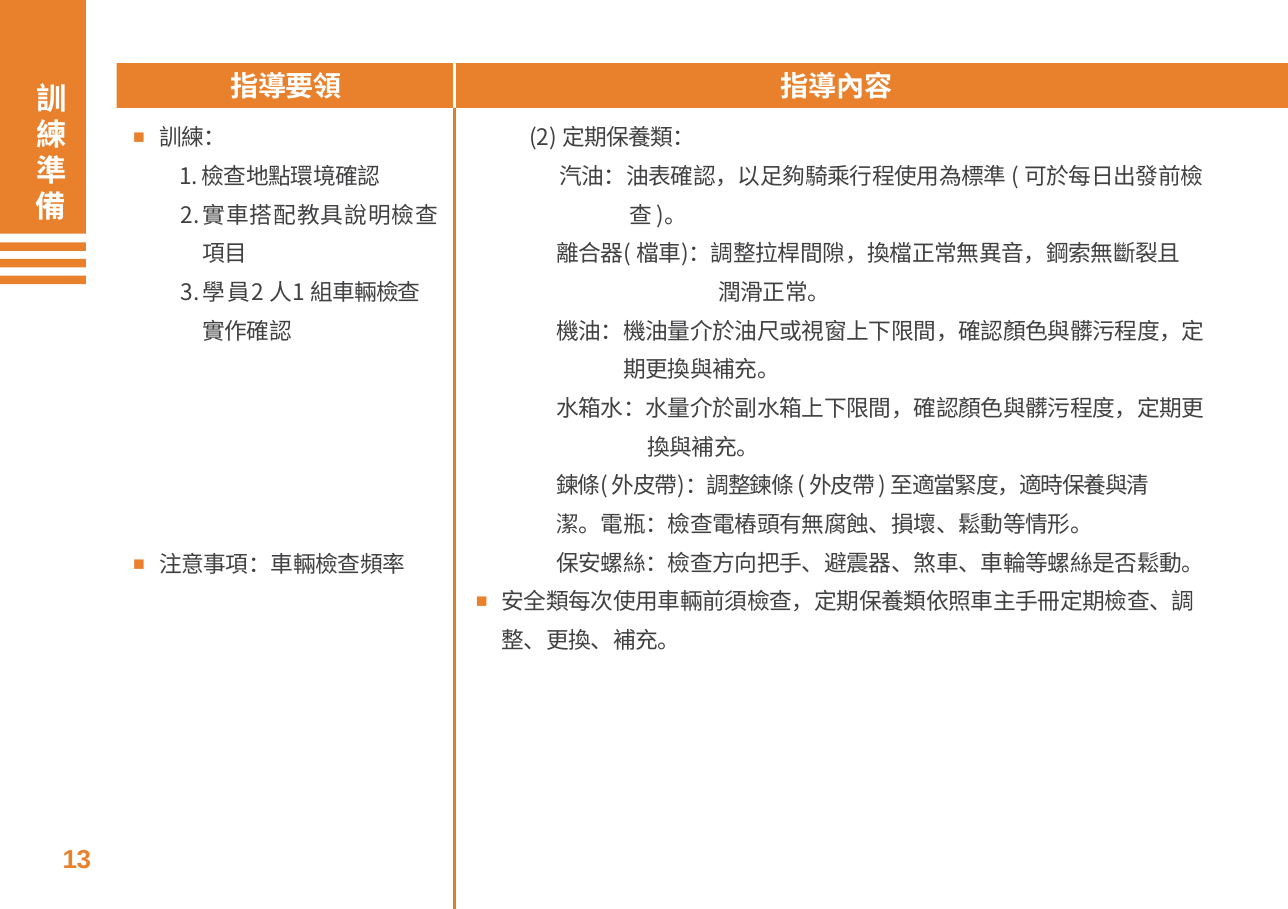
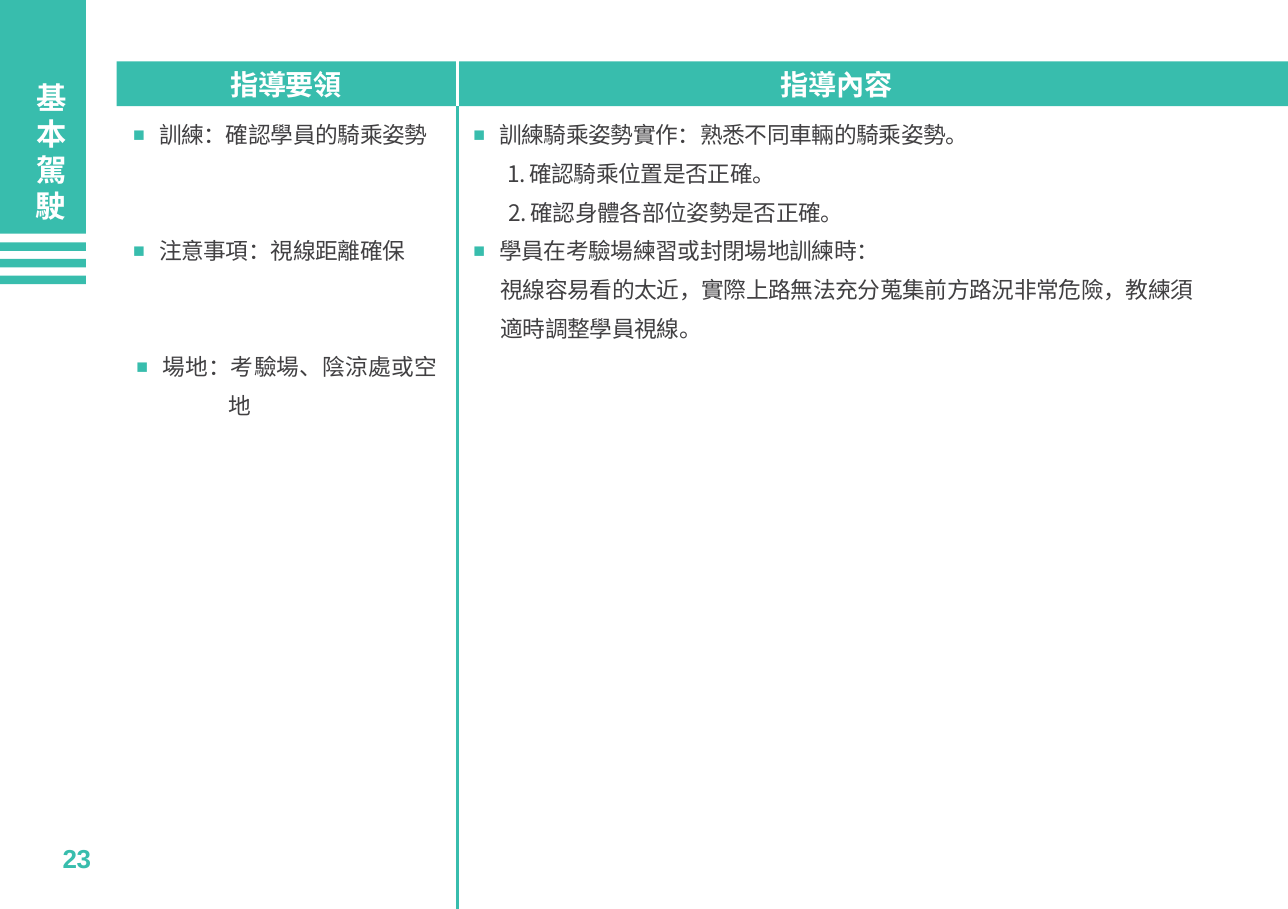
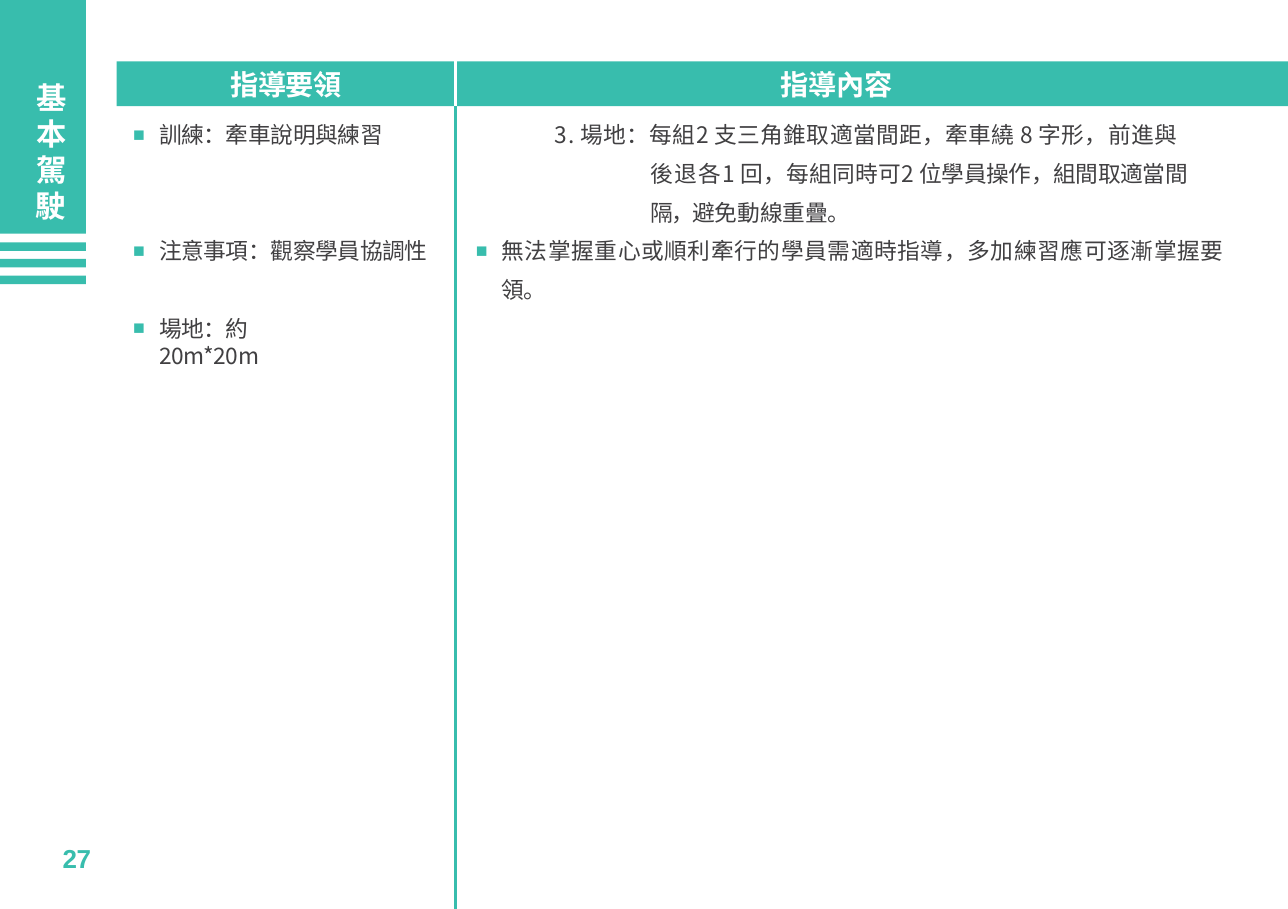
from dataclasses import dataclass
from enum import Enum

from lxml.etree import SubElement
from pptx import Presentation
from pptx.dml.color import RGBColor
from pptx.enum.shapes import MSO_CONNECTOR, MSO_SHAPE
from pptx.enum.text import MSO_ANCHOR as Anchor, MSO_AUTO_SIZE, PP_ALIGN as Align
from pptx.oxml.ns import qn
from pptx.util import Cm, Pt

WIDTH, HEIGHT = 20.98, 14.81
CJK_FONT, LATIN_FONT = "Noto Sans CJK SC", "Arial"
ORANGE, DARK_ORANGE, TEAL = "E8802C", "DC7C2F", "38BDAD"
INK, WHITE = "414042", "FFFFFF"

TAB_WIDTH, TAB_HEIGHT = 1.4, 3.81
STRIPE_TOP, STRIPE_HEIGHT, STRIPE_PITCH = 3.95, 0.14, 0.27
BAND_LEFT, BAND_HEIGHT = 1.9, 0.73
HEADERS = (("指導要領", 4.66), ("指導內容", 13.63))  # text, centre
COLUMNS = ((2.16, 5.2), (7.64, 12.7))  # left, width
LINE_HEIGHT = 0.63


class Marker(Enum):
    NONE = 0
    SQUARE = 1
    NUMBER = 2


@dataclass(frozen=True)
class Run:
    text: str
    spacing: float = -0.1
    starts_line: bool = False


@dataclass(frozen=True)
class Item:
    """One paragraph; lengths are in centimetres."""
    runs: tuple[Run, ...]
    margin: float
    indent: float = 0
    marker: Marker = Marker.NONE
    before: float = 0
    line_height: float = LINE_HEIGHT


@dataclass(frozen=True)
class Page:
    number: str
    title: str
    color: str
    divider_color: str
    divider_x: float
    band_top: float
    points: tuple[Item, ...]
    details: tuple[Item, ...]


def bullet(*runs: Run, margin: float = 0.43, before: float = 0) -> Item:
    return Item(runs, margin, -0.42, Marker.SQUARE, before)


def numbered(*runs: Run, margin: float) -> Item:
    return Item(runs, margin, -0.36, Marker.NUMBER)


def plain(*runs: Run, margin: float, indent: float = 0,
          line_height: float = LINE_HEIGHT) -> Item:
    return Item(runs, margin, indent, line_height=line_height)


PAGES = (
    Page(
        "13", "訓練準備", ORANGE, DARK_ORANGE, 7.4, 1.03,
        points=(
            bullet(Run("訓練：", -0.2)),
            numbered(Run("檢查地點環境確認"), margin=1.12),
            numbered(Run("實車搭配教具說明檢查", 0.5),
                     Run("項目", -0.2, True), margin=1.14),
            numbered(Run("學員", 0.9), Run("2", 0), Run(" 人", 0.2), Run("1", 0),
                     Run(" 組車輛檢查", -0.3), Run("實作確認", -0.2, True),
                     margin=1.14),
            bullet(Run("注意事項：車輛檢查頻率"), before=3.17),
        ),
        details=(
            plain(Run("(2)", 0), Run(" 定期保養類：", -0.2), margin=0.98),
            plain(Run("汽油：油表確認，以足夠騎乘行程使用為標準 ( 可於每日出發前檢"),
                  Run("查 )。", -0.2, True), margin=2.61, indent=-1.14),
            plain(Run("離合器( 檔車)：調整拉桿間隙，換檔正常無異音，鋼索無斷裂且"),
                  Run("潤滑正常。", starts_line=True), margin=4.06, indent=-2.64),
            plain(Run("機油：機油量介於油尺或視窗上下限間，確認顏色與髒污程度，定"),
                  Run("期更換與補充。", starts_line=True), margin=2.51, indent=-1.09),
            plain(Run("水箱水：水量介於副水箱上下限間，確認顏色與髒污程度，定期更"),
                  Run("換與補充。", starts_line=True), margin=2.9, indent=-1.48),
            plain(Run("鍊條( 外皮帶)：調整鍊條 ( 外皮帶 ) 至適當緊度，適時保養與清", -0.5),
                  Run("潔。電瓶：檢查電樁頭有無腐蝕、損壞、鬆動等情形。", starts_line=True),
                  margin=1.42),
            plain(Run("保安螺絲：檢查方向把手、避震器、煞車、車輪等螺絲是否鬆動。"),
                  margin=1.42),
            bullet(Run("安全類每次使用車輛前須檢查，定期保養類依照車主手冊定期檢查、調"),
                   Run("整、更換、補充。", starts_line=True), margin=0.53),
        ),
    ),
    Page(
        "23", "基本駕駛", TEAL, TEAL, 7.45, 1.0,
        points=(
            bullet(Run("訓練：確認學員的騎乘姿勢")),
            bullet(Run("注意事項：視線距離確保"), before=2 * LINE_HEIGHT),
            bullet(Run("場地：考驗場、陰涼處或空", 0.2), margin=0.48,
                   before=2 * LINE_HEIGHT),
            plain(Run("地", 0), margin=1.57),
        ),
        details=(
            bullet(Run("訓練騎乘姿勢實作：熟悉不同車輛的騎乘姿勢。"), margin=0.49),
            numbered(Run("確認騎乘位置是否正確。"), margin=0.98),
            numbered(Run("確認身體各部位姿勢是否正確。"), margin=1.0),
            bullet(Run("學員在考驗場練習或封閉場地訓練時："), margin=0.49),
            plain(Run("視線容易看的太近，實際上路無法充分蒐集前方路況非常危險，教練須"),
                  Run("適時調整學員視線。", starts_line=True), margin=0.51),
        ),
    ),
    Page(
        "27", "基本駕駛", TEAL, TEAL, 7.42, 1.0,
        points=(
            bullet(Run("訓練：牽車說明與練習")),
            bullet(Run("注意事項：觀察學員協調性"), before=2 * LINE_HEIGHT),
            bullet(Run("場地：約"), before=LINE_HEIGHT),
            plain(Run("20m*20m"), margin=0.43, line_height=0.44),
        ),
        details=(
            plain(Run("3. 場地：每組", 0.25), Run("2", 0),
                  Run(" 支三角錐取適當間距，牽車繞", 0.25), Run(" 8", 0),
                  Run(" 字形，前進與", 0.25),
                  Run("後退各", 0.7, True), Run("1", 0),
                  Run(" 回，每組同時可", 0.2), Run("2", 0),
                  Run(" 位學員操作，組間取適當間"),
                  Run("隔，避", -0.7, True), Run("免動線重疊。", 0),
                  margin=2.95, indent=-1.55),
            bullet(Run("無法掌握重心或順利牽行的學員需適時指導，多加練習應可逐漸掌握要", 0.35),
                   Run("領。", -0.2, True), margin=0.53),
        ),
    ),
)


def rgb(color: str) -> RGBColor:
    return RGBColor.from_string(color)


def place(shape, left: float, top: float, width: float, height: float) -> None:
    shape.left, shape.top = Cm(left), Cm(top)
    shape.width, shape.height = Cm(width), Cm(height)


def prepare_frame(shape, anchor: Anchor, wrap: bool = True):
    """Strip insets and autofit, and return the text frame."""
    frame = shape.text_frame
    frame.auto_size = MSO_AUTO_SIZE.NONE
    frame.word_wrap = wrap
    frame.vertical_anchor = anchor
    frame.margin_left = frame.margin_right = frame.margin_top = frame.margin_bottom = 0
    return frame


def add_run(paragraph, text: str, size: float, color: str, bold: bool = False,
            spacing: float = -0.1, font_name: str = CJK_FONT) -> None:
    run = paragraph.add_run()
    run.text = text
    run.font.size = Pt(size)
    run.font.bold = bold
    run.font.color.rgb = rgb(color)
    run.font.name = font_name
    properties = run._r.get_or_add_rPr()
    properties.set("spc", str(round(spacing * 100)))
    SubElement(properties, qn("a:ea")).set("typeface", font_name)


def add_rectangle(slide, color: str, left: float, top: float,
                  width: float, height: float) -> None:
    shape = slide.shapes.add_shape(
        MSO_SHAPE.RECTANGLE, Cm(left), Cm(top), Cm(width), Cm(height))
    shape.shadow.inherit = False
    shape.fill.solid()
    shape.fill.fore_color.rgb = rgb(color)
    shape.line.fill.background()


def add_vertical_line(slide, color: str, x: float, top: float, bottom: float) -> None:
    line = slide.shapes.add_connector(
        MSO_CONNECTOR.STRAIGHT, Cm(x), Cm(top), Cm(x), Cm(bottom))
    line.line.color.rgb = rgb(color)
    line.line.width = Pt(1.5)
    SubElement(line.element.spPr, qn("a:effectLst"))


def add_label(slide, text: str, left: float, top: float, width: float, height: float,
              size: float, color: str, align: Align, font_name: str = CJK_FONT) -> None:
    box = slide.shapes.add_textbox(Cm(left), Cm(top), Cm(width), Cm(height))
    paragraph = prepare_frame(box, Anchor.MIDDLE, wrap=False).paragraphs[0]
    paragraph.alignment = align
    add_run(paragraph, text, size, color, bold=True, font_name=font_name)


def set_marker(paragraph, item: Item, color: str) -> None:
    properties = paragraph._p.get_or_add_pPr()
    properties.set("marL", str(Cm(item.margin)))
    properties.set("indent", str(Cm(item.indent)))
    if item.marker is Marker.SQUARE:
        bullet_color = SubElement(properties, qn("a:buClr"))
        SubElement(bullet_color, qn("a:srgbClr")).set("val", color)
        SubElement(properties, qn("a:buSzPct")).set("val", "86000")
        SubElement(properties, qn("a:buFont")).set("typeface", LATIN_FONT)
        SubElement(properties, qn("a:buChar")).set("char", "■")
    elif item.marker is Marker.NUMBER:
        SubElement(properties, qn("a:buFont")).set("typeface", CJK_FONT)
        SubElement(properties, qn("a:buAutoNum")).set("type", "arabicPeriod")
    else:
        SubElement(properties, qn("a:buNone"))


def fill_column(placeholder, items: tuple[Item, ...], color: str) -> None:
    frame = prepare_frame(placeholder, Anchor.TOP)
    for index, item in enumerate(items):
        paragraph = frame.add_paragraph() if index else frame.paragraphs[0]
        paragraph.alignment = Align.LEFT
        paragraph.line_spacing = Cm(item.line_height)
        paragraph.space_before = Cm(item.before)
        paragraph.space_after = Pt(0)
        set_marker(paragraph, item, color)
        for run in item.runs:
            if run.starts_line:
                paragraph.add_line_break()
            add_run(paragraph, run.text, 10.5, INK, spacing=run.spacing)


def fill_title(title, text: str) -> None:
    """Set the title one character to a line, in front of the side tab."""
    place(title, 0.55, 1.3, 0.56, 2.4)
    paragraph = prepare_frame(title, Anchor.TOP).paragraphs[0]
    paragraph.alignment = Align.CENTER
    paragraph.line_spacing = Pt(16.6)
    paragraph.space_before = Pt(0)
    add_run(paragraph, text, 14, WHITE, bold=True, spacing=-0.5)
    title.element.getparent().append(title.element)


def draw_side_tab(slide, color: str) -> None:
    add_rectangle(slide, color, 0, 0, TAB_WIDTH, TAB_HEIGHT)
    for index in range(3):
        add_rectangle(slide, color, 0, STRIPE_TOP + index * STRIPE_PITCH,
                      TAB_WIDTH, STRIPE_HEIGHT)


def draw_header(slide, page: Page) -> None:
    band_bottom = page.band_top + BAND_HEIGHT
    add_rectangle(slide, page.color, BAND_LEFT, page.band_top,
                  WIDTH - BAND_LEFT, BAND_HEIGHT)
    for text, center in HEADERS:
        add_label(slide, text, center - 1, page.band_top, 2, BAND_HEIGHT,
                  13, WHITE, Align.CENTER)
    add_vertical_line(slide, page.divider_color, page.divider_x, band_bottom - 0.13, HEIGHT)
    add_vertical_line(slide, WHITE, page.divider_x, page.band_top, band_bottom)


def build_page(presentation, page: Page) -> None:
    slide = presentation.slides.add_slide(presentation.slide_layouts[3])
    draw_side_tab(slide, page.color)
    fill_title(slide.shapes.title, page.title)
    body_top = page.band_top + 0.79
    for index, items in enumerate((page.points, page.details)):
        left, width = COLUMNS[index]
        placeholder = slide.placeholders[index + 1]
        place(placeholder, left, body_top, width, 9.2)
        fill_column(placeholder, items, page.color)
    draw_header(slide, page)
    add_label(slide, page.number, 1.02, 13.69, 0.55, 0.58,
              12, page.color, Align.LEFT, LATIN_FONT)


def main() -> None:
    presentation = Presentation()
    presentation.slide_width, presentation.slide_height = Cm(WIDTH), Cm(HEIGHT)
    for page in PAGES:
        build_page(presentation, page)
    presentation.save("out.pptx")


if __name__ == "__main__":
    main()
